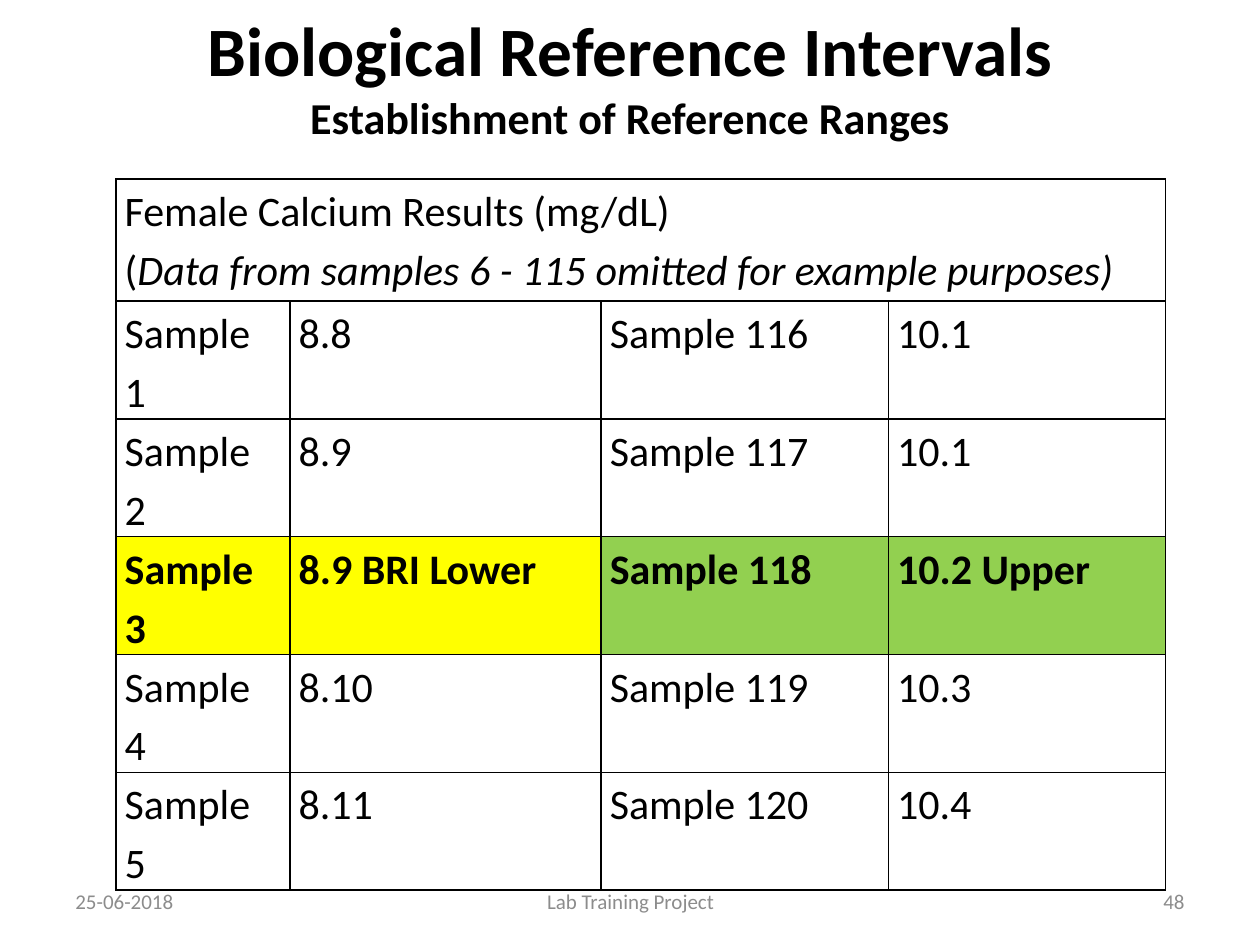
from dataclasses import dataclass

from lxml import etree
from pptx import Presentation
from pptx.dml.color import RGBColor
from pptx.enum.text import MSO_ANCHOR, MSO_AUTO_SIZE, PP_ALIGN
from pptx.oxml.ns import qn
from pptx.util import Inches, Pt

LEFT, CENTER, RIGHT, JUSTIFY = PP_ALIGN.LEFT, PP_ALIGN.CENTER, PP_ALIGN.RIGHT, PP_ALIGN.JUSTIFY
MIDDLE = MSO_ANCHOR.MIDDLE
NO_AUTOFIT = MSO_AUTO_SIZE.NONE


@dataclass(frozen=True)
class Theme:
    font: str = "Calibri"
    ink: str = "000000"
    footer_ink: str = "8C8C8C"
    lower_fill: str = "FFFF00"
    upper_fill: str = "92D050"
    title_size: float = 39.6
    subtitle_size: float = 25.2
    table_size: float = 24
    footer_size: float = 12


theme = Theme()


def add_span(para, text, size, color=theme.ink, **styles):
    span = para.add_run()
    span.text = text
    span.font.color.rgb = RGBColor.from_string(color)
    for name, value in {"name": theme.font, "size": Pt(size), **styles}.items():
        setattr(span.font, name, value)


def format_cell(cell, fill=None):
    """Set the insets, the black grid lines and the fill of a cell."""
    for side, inset in {"left": 0.07, "right": 0.1, "top": 0, "bottom": 0}.items():
        setattr(cell, f"margin_{side}", Inches(inset))
    properties = cell._tc.get_or_add_tcPr()
    for edge in ("a:lnL", "a:lnR", "a:lnT", "a:lnB"):
        line = etree.SubElement(properties, qn(edge), w=str(Pt(1)))
        solid = etree.SubElement(line, qn("a:solidFill"))
        etree.SubElement(solid, qn("a:srgbClr"), val=theme.ink)
    if fill:
        cell.fill.solid()
        cell.fill.fore_color.rgb = RGBColor.from_string(fill)
    else:
        cell.fill.background()


deck = Presentation()
deck.slide_width, deck.slide_height = Inches(10), Inches(7.5)
page = deck.slides.add_slide(deck.slide_layouts[5])

# Title
title = page.shapes.title
title.left, title.top, title.width, title.height = map(Inches, (0.5, 0.18, 9, 1.25))
title_format = {
    "auto_size": NO_AUTOFIT,
    "vertical_anchor": MIDDLE,
    "margin_top": 0,
    "margin_bottom": Inches(0.42),
}
for name, value in title_format.items():
    setattr(title.text_frame, name, value)
para = title.text_frame.paragraphs[0]
para.alignment = CENTER
add_span(para, "Biological Reference Intervals", theme.title_size, bold=True)
para.add_line_break()
add_span(para, "Establishment of Reference Ranges", theme.subtitle_size, bold=True)

# Table of calcium results
column_widths = (1.38, 2.47, 2.28, 2.2)
header_height, row_height = 0.97, 0.86
results = [
    ("Sample 1", "8.8", "Sample 116", "10.1"),
    ("Sample 2", "8.9", "Sample 117", "10.1"),
    ("Sample 3", "8.9 BRI Lower", "Sample 118", "10.2 Upper"),
    ("Sample 4", "8.10", "Sample 119", "10.3"),
    ("Sample 5", "8.11", "Sample 120", "10.4"),
]
limit_row = 3
limit_fills = [theme.lower_fill] * 2 + [theme.upper_fill] * 2

frame = page.shapes.add_table(
    len(results) + 1, len(column_widths),
    Inches(0.92), Inches(1.42), Inches(sum(column_widths)),
    Inches(header_height + row_height * len(results)),
)
table = frame.table
table.first_row = table.horz_banding = False
for column, width in zip(table.columns, column_widths):
    column.width = Inches(width)
for index, row in enumerate(table.rows):
    row.height = Inches(row_height if index else header_height)

for cell in table.rows[0].cells:
    format_cell(cell)
header = table.cell(0, 0)
header.merge(table.cell(0, len(column_widths) - 1))
heading = header.text_frame.paragraphs[0]
note = header.text_frame.add_paragraph()
add_span(heading, "Female Calcium Results (mg/dL)", theme.table_size)
add_span(note, "(", theme.table_size)
add_span(note, "Data from samples 6 - 115 omitted for example purposes)", theme.table_size, italic=True)

for row_index, values in enumerate(results, start=1):
    is_limit = row_index == limit_row
    for column_index, value in enumerate(values):
        cell = table.cell(row_index, column_index)
        format_cell(cell, limit_fills[column_index] if is_limit else None)
        add_span(cell.text_frame.paragraphs[0], value, theme.table_size, bold=is_limit)

for cell in table.iter_cells():
    for para in cell.text_frame.paragraphs:
        para.alignment, para.line_spacing = JUSTIFY, 1.15

# Footer
footers = [
    (0.5, 2.33, LEFT, "25-06-2018"),
    (3.42, 3.17, CENTER, "Lab Training Project"),
    (7.17, 2.33, RIGHT, "48"),
]
for left, width, alignment, text in footers:
    box = page.shapes.add_textbox(Inches(left), Inches(6.95), Inches(width), Inches(0.4))
    box.text_frame.word_wrap = True
    box.text_frame.vertical_anchor = MIDDLE
    para = box.text_frame.paragraphs[0]
    para.alignment = alignment
    add_span(para, text, theme.footer_size, theme.footer_ink)

deck.save("out.pptx")
